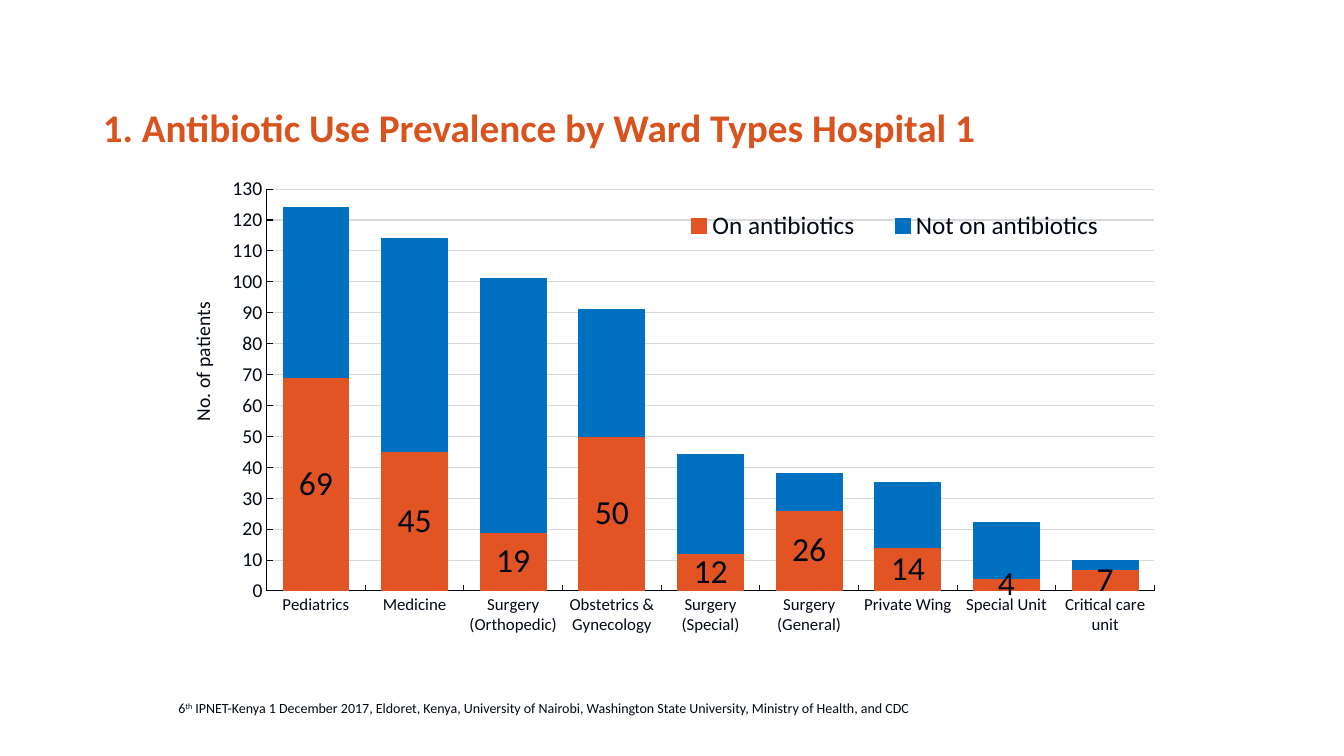
from lxml.etree import SubElement
from pptx import Presentation
from pptx.chart.data import CategoryChartData
from pptx.dml.color import RGBColor
from pptx.enum.chart import XL_CHART_TYPE as ChartType
from pptx.enum.chart import XL_LABEL_POSITION as LabelPosition
from pptx.enum.chart import XL_LEGEND_POSITION as LegendPosition
from pptx.enum.chart import XL_TICK_MARK as TickMark
from pptx.enum.text import MSO_ANCHOR as Anchor
from pptx.enum.text import MSO_AUTO_SIZE as AutoSize
from pptx.enum.text import PP_ALIGN as Align
from pptx.oxml.ns import qn
from pptx.util import Inches, Pt

INK = RGBColor(0x02, 0x09, 0x16)
AXIS = RGBColor(0x00, 0x01, 0x04)
GRID = RGBColor(0xD9, 0xD9, 0xD9)
HEADING = RGBColor(0xD9, 0x53, 0x1E)
ORANGE = RGBColor(0xE2, 0x54, 0x23)
BLUE = RGBColor(0x00, 0x70, 0xC0)

WARDS = {
    "Pediatrics": (69, 55),
    "Medicine": (45, 69),
    "Surgery (Orthopedic)": (19, 82),
    "Obstetrics & Gynecology": (50, 41),
    "Surgery (Special)": (12, 32),
    "Surgery (General)": (26, 12),
    "Private Wing": (14, 21),
    "Special Unit": (4, 18),
    "Critical care unit": (7, 3),
}
GROUPS = {"On antibiotics": ORANGE, "Not on antibiotics": BLUE}


class WardSlide:
    font_name = "Calibri"

    def __init__(self, deck):
        self.slide = deck.slides.add_slide(deck.slide_layouts[5])

    def style(self, font, size, color=INK, bold=False):
        font.name = self.font_name
        font.size = Pt(size)
        font.bold = bold
        font.color.rgb = color

    def stroke(self, line, color):
        line.color.rgb = color
        line.width = Pt(0.75)

    def run(self, paragraph, text, size, color=INK, bold=False):
        run = paragraph.add_run()
        run.text = text
        self.style(run.font, size, color, bold)
        return run

    def title(self, text, left, top, width, height):
        heading = self.slide.shapes.title
        heading.left, heading.top = Inches(left), Inches(top)
        heading.width, heading.height = Inches(width), Inches(height)
        frame = heading.text_frame
        frame.auto_size = AutoSize.NONE
        frame.vertical_anchor = Anchor.BOTTOM
        paragraph = frame.paragraphs[0]
        paragraph.alignment = Align.LEFT
        paragraph.line_spacing = Pt(30)
        self.run(paragraph, text, 28, HEADING, True)

    def footnote(self, parts, left, top, width, height):
        box = self.slide.shapes.add_textbox(
            Inches(left), Inches(top), Inches(width), Inches(height))
        box.text_frame.word_wrap = True
        for text, raised in parts:
            run = self.run(box.text_frame.paragraphs[0], text, 10)
            if raised:
                run._r.get_or_add_rPr().set("baseline", "30000")

    def place(self, part, inner=False, **fractions):
        layout = part.find(qn("c:layout"))
        if layout is None:
            layout = SubElement(part, qn("c:layout"))
            overlay = part.find(qn("c:overlay"))
            part.insert(0 if overlay is None else part.index(overlay), layout)
        manual = SubElement(layout, qn("c:manualLayout"))
        if inner:
            SubElement(manual, qn("c:layoutTarget")).set("val", "inner")
        for side in ("x", "y"):
            SubElement(manual, qn(f"c:{side}Mode")).set("val", "edge")
        for side, fraction in fractions.items():
            SubElement(manual, qn(f"c:{side}")).set("val", str(fraction))

    def axis(self, axis, size, color):
        axis.major_tick_mark = TickMark.INSIDE
        axis.minor_tick_mark = TickMark.NONE
        self.style(axis.tick_labels.font, size)
        self.stroke(axis.format.line, color)

    def stacked_chart(self, left, top, width, height):
        data = CategoryChartData()
        data.categories = list(WARDS)
        for group, counts in zip(GROUPS, zip(*WARDS.values())):
            data.add_series(group, counts)
        chart = self.slide.shapes.add_chart(
            ChartType.COLUMN_STACKED, Inches(left), Inches(top),
            Inches(width), Inches(height), data).chart
        self.style(chart.font, 14)
        chart.has_title = False
        self.place(chart._chartSpace.chart.plotArea, True,
                   x=0.098, y=0.027, w=0.886, h=0.852)

        columns = chart.plots[0]
        columns.gap_width, columns.overlap = 50, 100
        columns.vary_by_categories = False
        for group, color in zip(columns.series, GROUPS.values()):
            group.format.fill.solid()
            group.format.fill.fore_color.rgb = color
            self.stroke(group.format.line, color)
        labels = columns.series[0].data_labels
        labels.show_value = True
        labels.position = LabelPosition.CENTER
        self.style(labels.font, 24)

        self.axis(chart.category_axis, 12, INK)
        patients = chart.value_axis
        self.axis(patients, 14, AXIS)
        patients.minimum_scale, patients.maximum_scale = 0, 130
        patients.major_unit = 10
        self.stroke(patients.major_gridlines.format.line, GRID)
        caption = patients.axis_title
        self.run(caption.text_frame.paragraphs[0], "No. of patients", 14)
        self.place(caption._element, x=0.017, y=0.258)

        chart.has_legend = True
        legend = chart.legend
        legend.position = LegendPosition.BOTTOM
        legend.include_in_layout = False
        self.style(legend.font, 18)
        self.place(legend._element, x=0.49, y=0.06, w=0.47, h=0.09)


def main():
    deck = Presentation()
    deck.slide_width, deck.slide_height = Inches(13.33), Inches(7.5)
    page = WardSlide(deck)
    page.title("1. Antibiotic Use Prevalence by Ward Types Hospital 1",
               0.92, 0.29, 9, 1.25)
    page.stacked_chart(1.67, 1.75, 9.94, 4.68)
    page.footnote([
        ("6", False),
        ("th", True),
        (" IPNET-Kenya 1 December 2017, Eldoret, Kenya, University of Nairobi, "
         "Washington State University, Ministry of Health, and CDC", False),
    ], 1.67, 6.89, 10.74, 0.61)
    deck.save("out.pptx")


if __name__ == "__main__":
    main()
